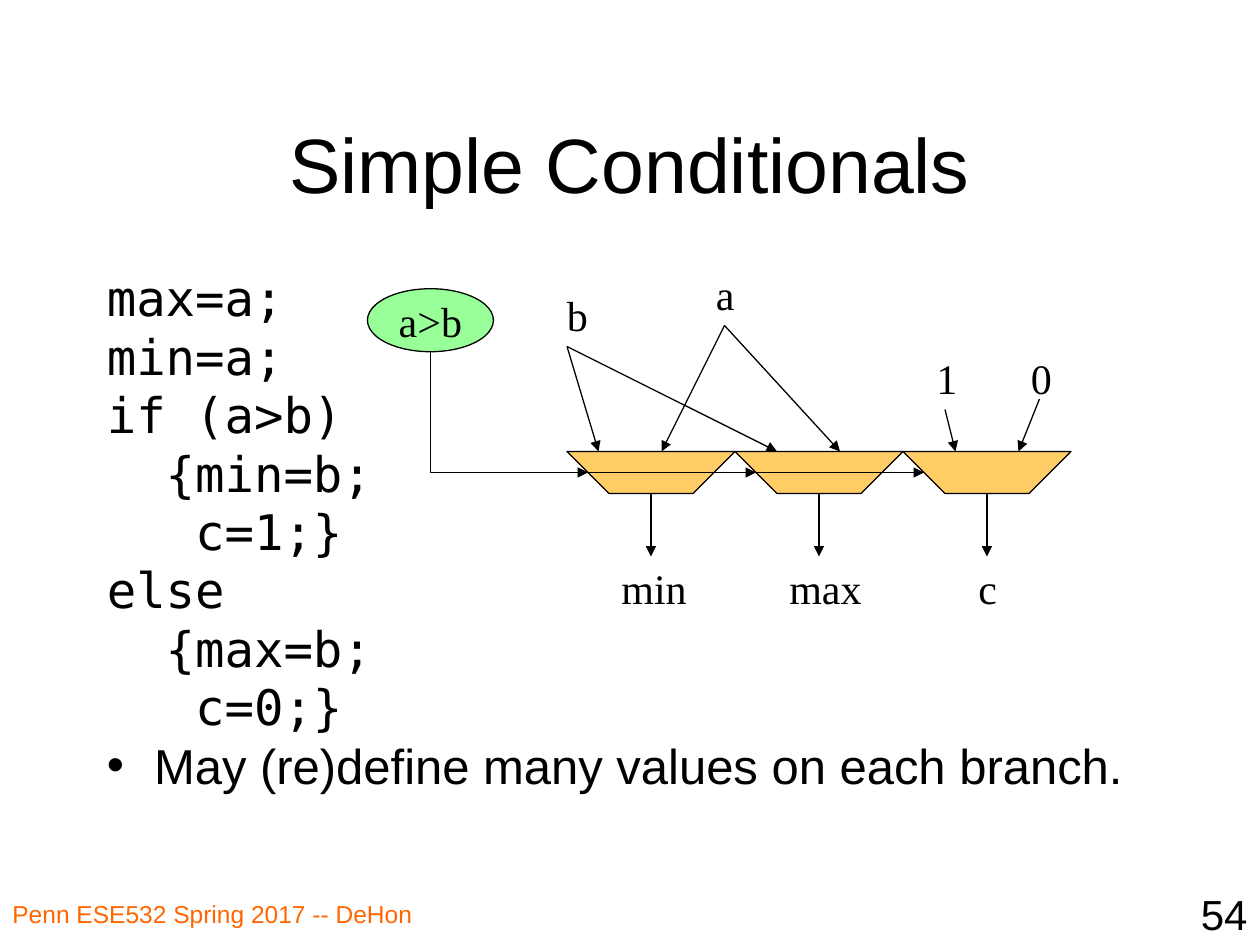
from lxml.etree import SubElement
from pptx import Presentation
from pptx.dml.color import RGBColor
from pptx.enum.shapes import MSO_CONNECTOR, MSO_SHAPE
from pptx.enum.text import MSO_ANCHOR, PP_ALIGN
from pptx.oxml.ns import qn
from pptx.util import Pt


def color(value):
    return RGBColor.from_string(value)


class SlideBuilder:
    black = "000000"
    sans = "Arial"
    serif = "Times New Roman"
    mono = "DejaVu Sans Mono"
    line_width = 0.75

    def __init__(self, page):
        self.page = page

    def format_para(self, para, font, size, fill):
        for span in para.runs:
            span.font.name = font
            span.font.size = Pt(size)
            span.font.color.rgb = color(fill)

    def text(self, left, top, width, height, words, size=24, font=serif, fill=black,
             align=PP_ALIGN.LEFT, anchor=MSO_ANCHOR.TOP, wrap=True):
        box = self.page.shapes.add_textbox(Pt(left), Pt(top), Pt(width), Pt(height))
        frame = box.text_frame
        frame.word_wrap = wrap
        frame.vertical_anchor = anchor
        frame.text = words
        for para in frame.paragraphs:
            para.alignment = align
            self.format_para(para, font, size, fill)
        return box

    def label(self, left, top, width, words):
        return self.text(left, top, width, 36, words, wrap=False)

    def body(self, left, top, width, height, code, bullet):
        box = self.text(left, top, width, height, "\n".join(code + [bullet]), 28, self.mono)
        paras = box.text_frame.paragraphs
        for index, para in enumerate(paras):
            properties = para._p.get_or_add_pPr()
            properties.set("marL", str(Pt(27)))
            properties.set("indent", str(-Pt(27)))
            para.line_spacing = 0.8
            para.space_before = Pt(6.5 if index else 0)
        last = paras[-1]
        properties = last._p.get_or_add_pPr()
        SubElement(properties, qn("a:buFont")).set("typeface", self.sans)
        SubElement(properties, qn("a:buChar")).set("char", "•")
        self.format_para(last, self.sans, 28, self.black)

    def outline(self, shape, fill):
        shape.shadow.inherit = False
        shape.fill.solid()
        shape.fill.fore_color.rgb = color(fill)
        shape.line.color.rgb = color(self.black)
        shape.line.width = Pt(self.line_width)

    def ellipse(self, left, top, width, height, words, fill):
        shape = self.page.shapes.add_shape(
            MSO_SHAPE.OVAL, Pt(left), Pt(top), Pt(width), Pt(height))
        self.outline(shape, fill)
        frame = shape.text_frame
        frame.word_wrap = False
        frame.vertical_anchor = MSO_ANCHOR.MIDDLE
        frame.text = words
        para = frame.paragraphs[0]
        para.alignment = PP_ALIGN.CENTER
        self.format_para(para, self.serif, 24, self.black)

    def mux(self, left, top, width, height, fill):
        builder = self.page.shapes.build_freeform(Pt(left), Pt(top))
        corners = [(left + height, top + height),
                   (left + width - height, top + height), (left + width, top)]
        builder.add_line_segments([(Pt(x), Pt(y)) for x, y in corners], close=True)
        self.outline(builder.convert_to_shape(), fill)

    def arrow(self, start, end, kind=MSO_CONNECTOR.STRAIGHT):
        connector = self.page.shapes.add_connector(
            kind, *(Pt(value) for value in start + end))
        connector.line.color.rgb = color(self.black)
        connector.line.width = Pt(self.line_width)
        SubElement(connector.line._get_or_add_ln(), qn("a:tailEnd")).set("type", "triangle")
        SubElement(connector._element.spPr, qn("a:effectLst"))
        return connector

    def down_then_right(self, start, end):
        middle_x, middle_y = (start[0] + end[0]) / 2, (start[1] + end[1]) / 2
        half_x, half_y = (end[0] - start[0]) / 2, (end[1] - start[1]) / 2
        connector = self.arrow((middle_x + half_y, middle_y - half_x),
                               (middle_x - half_y, middle_y + half_x), MSO_CONNECTOR.ELBOW)
        properties = connector._element.spPr
        properties.find(qn("a:xfrm")).set("rot", "16200000")
        properties.find(qn("a:prstGeom")).set("prst", "bentConnector2")


def main():
    deck = Presentation()
    deck.slide_width, deck.slide_height = Pt(720), Pt(540)
    page = deck.slides.add_slide(deck.slide_layouts[6])
    builder = SlideBuilder(page)

    builder.text(0, 510, 276, 30, "Penn ESE532 Spring 2017 -- DeHon", 14, builder.sans, "FF6600")
    builder.text(570, 504, 150, 36, "54", 24, builder.sans, align=PP_ALIGN.RIGHT)
    builder.text(54, 48, 612, 90, "Simple Conditionals", 44, builder.sans,
                 align=PP_ALIGN.CENTER, anchor=MSO_ANCHOR.MIDDLE)
    code = ["max=a;", "min=a;", "if (a>b)", "  {min=b;", "   c=1;}",
            "else", "  {max=b;", "   c=0;}"]
    builder.body(54, 156, 612, 324, code, "May (re)define many values on each branch.")

    mux_left, mux_top, mux_width, mux_height = 324, 258, 96, 24
    select_y = mux_top + mux_height / 2
    lefts = [mux_left + index * mux_width for index in range(3)]

    for left in lefts:
        center = left + mux_width / 2
        builder.arrow((center, 276), (center, 318))
    builder.ellipse(210, 165, 72, 36, "a>b", "99FF99")
    builder.down_then_right((246, 201), (lefts[0] + 12, select_y))
    for left in lefts:
        builder.mux(left, mux_top, mux_width, mux_height, "FFCC66")
    for left in lefts[1:]:
        builder.arrow((270, select_y), (left + 12, select_y))

    inputs = [((324, 198), (342, 444)), ((414, 186), (378, 480)),
              ((540, 234), (546,)), ((594, 228), (582,))]
    for start, targets in inputs:
        for target in targets:
            builder.arrow(start, (target, mux_top))

    labels = [("b", 316.8, 162, 26.4), ("a", 402, 150, 25), ("1", 528, 198, 26.4),
              ("0", 582, 198, 26.4), ("min", 348, 318, 52), ("max", 444, 318, 55.5),
              ("c", 552, 318, 25)]
    for words, left, top, width in labels:
        builder.label(left, top, width, words)

    deck.save("out.pptx")


if __name__ == "__main__":
    main()
